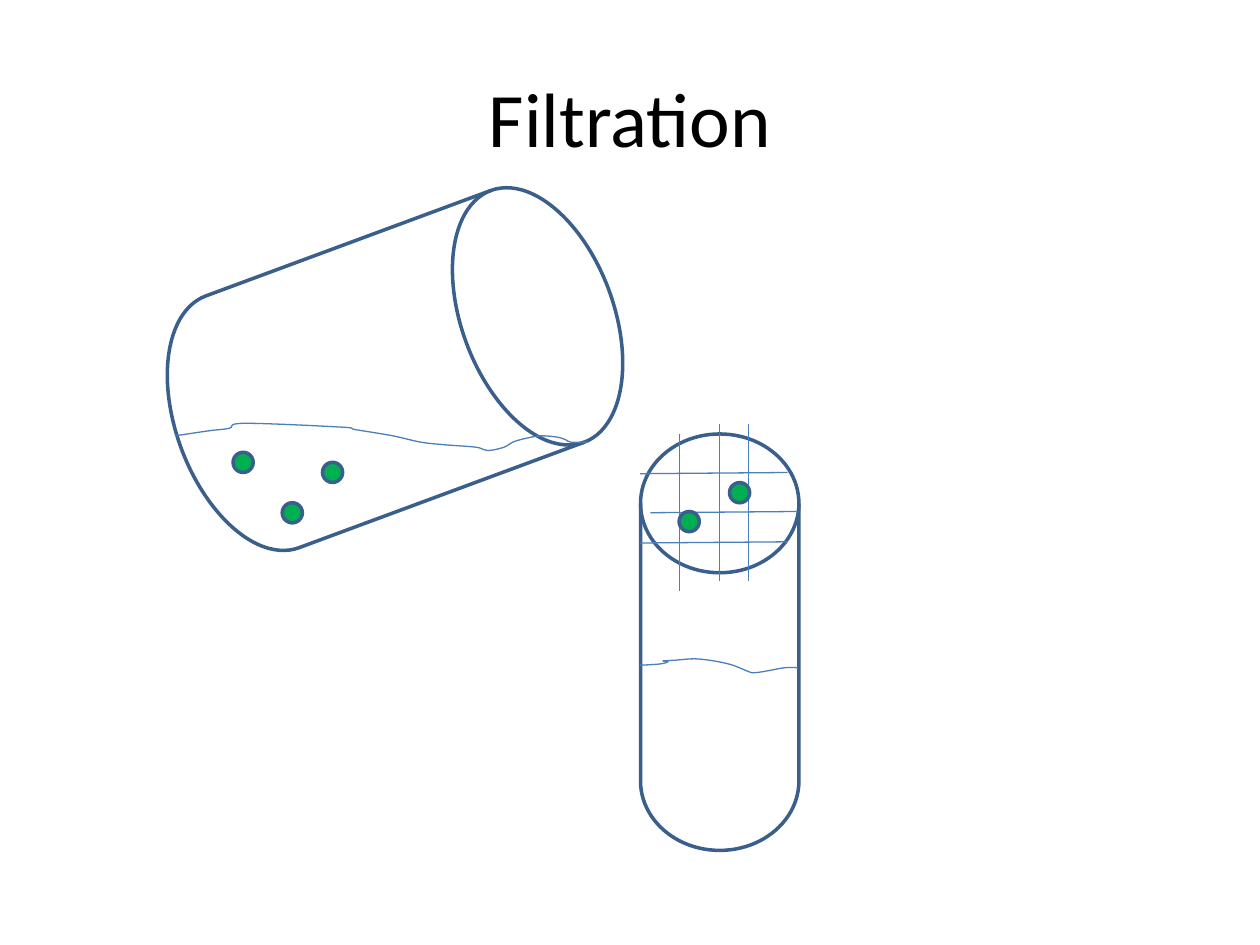
from lxml.etree import SubElement
from pptx import Presentation
from pptx.dml.color import RGBColor
from pptx.enum.shapes import MSO_CONNECTOR, MSO_SHAPE
from pptx.enum.text import MSO_ANCHOR, PP_ALIGN
from pptx.oxml.ns import qn
from pptx.util import Pt

WHITE = RGBColor(0xFF, 0xFF, 0xFF)
BLACK = RGBColor(0, 0, 0)
OUTLINE = RGBColor(0x3A, 0x5F, 0x8C)
THIN_BLUE = RGBColor(0x4B, 0x7E, 0xBC)
GREEN = RGBColor(0, 0xB0, 0x50)
PARTICLE_SIZE = 11.5

BEAKER_SURFACE = [
    (-49, 168.5), (-29.5, 165.6), (-18, 164.2), (-9.3, 161.3), (46.1, 163.5),
    (54, 164.9), (75.6, 168.5), (91.5, 172.1), (105.2, 173.6), (123.2, 175),
    (129.6, 176.9), (139, 175), (144, 172.1), (151.2, 170), (159.9, 168.5),
    (169.2, 169.2), (174.3, 170.7), (177.2, 172.1), (186.5, 172.1),
]
TUBE_SURFACE = [
    (-0.5, 132.2), (10.8, 131.5), (15.7, 130.3), (12.9, 129.7), (20, 129.3),
    (33, 128.6), (50.2, 131.4), (61.7, 135.8), (64.6, 136.5), (70.3, 135.8),
    (82.6, 133.6), (89.8, 133.6),
]


def add_outlined(page, kind, box, fill):
    shape = page.shapes.add_shape(kind, *(Pt(value) for value in box))
    shape.shadow.inherit = False
    shape.fill.solid()
    shape.fill.fore_color.rgb = fill
    shape.line.color.rgb = OUTLINE
    shape.line.width = Pt(2)
    return shape


def add_thin_line(page, start, end):
    line = page.shapes.add_connector(
        MSO_CONNECTOR.STRAIGHT, *(Pt(value) for value in (*start, *end)))
    line.line.color.rgb = THIN_BLUE
    line.line.width = Pt(0.75)
    SubElement(line._element.spPr, qn("a:effectLst"))


def smooth_controls(points):
    """Return two control points and an end point for each curve segment."""
    padded = [points[0], *points, points[-1]]
    controls = []
    for before, start, end, after in zip(padded, padded[1:], padded[2:], padded[3:]):
        controls.append(tuple(s + (e - b) / 6 for b, s, e in zip(before, start, end)))
        controls.append(tuple(e - (a - s) / 6 for s, e, a in zip(start, end, after)))
        controls.append(end)
    return controls


def add_surface(page, box, offsets):
    """Draw a liquid surface as a smooth open curve through the offsets."""
    left, top = box[:2]
    points = [(Pt(left + x), Pt(top + y)) for x, y in offsets]
    builder = page.shapes.build_freeform(*points[0])
    builder.add_line_segments(smooth_controls(points), close=False)
    surface = builder.convert_to_shape()
    segments = list(surface._element.iter(qn("a:lnTo")))
    outline = segments[0].getparent()
    for index in range(0, len(segments), 3):
        curve = SubElement(outline, qn("a:cubicBezTo"))
        for segment in segments[index:index + 3]:
            curve.append(segment[0])
            outline.remove(segment)
    surface.shadow.inherit = False
    surface.fill.background()
    surface.line.color.rgb = THIN_BLUE
    surface.line.width = Pt(0.75)


def add_particles(page, box, offsets):
    for x, y in offsets:
        add_outlined(page, MSO_SHAPE.OVAL,
                     (box[0] + x, box[1] + y, PARTICLE_SIZE, PARTICLE_SIZE), GREEN)


def add_vessel(page, box, surface, rotation=0):
    vessel = add_outlined(page, MSO_SHAPE.FLOWCHART_MAGNETIC_DISK, box, WHITE)
    vessel.rotation = rotation
    add_surface(page, box, surface)


def add_title(page, box):
    title = page.shapes.add_textbox(*(Pt(value) for value in box))
    frame = title.text_frame
    frame.word_wrap = True
    frame.vertical_anchor = MSO_ANCHOR.MIDDLE
    para = frame.paragraphs[0]
    para.alignment = PP_ALIGN.CENTER
    span = para.add_run()
    span.text = "Filtration"
    span.font.name = "Calibri"
    span.font.size = Pt(44)
    span.font.color.rgb = BLACK


def add_beaker(page, box):
    add_vessel(page, box, BEAKER_SURFACE, rotation=69.7)
    add_particles(page, box, [(-15.8, 177.9), (35.3, 183.6), (12.3, 206.7)])


def add_filter_mesh(page, box):
    left, top = box[:2]
    for x, y in [(22.1, 0), (45.1, -5.8), (61.7, -5.8)]:
        add_thin_line(page, (left + x, top + y), (left + x, top + y + 90))
    for x, y in [(84, 22), (89.8, 44.3), (84, 61.6)]:
        add_thin_line(page, (left + x, top + y), (left + x - 84.2, top + y + 0.7))


def add_filter_tube(page, box):
    add_vessel(page, box, TUBE_SURFACE)
    add_filter_mesh(page, box)
    add_particles(page, box, [(50.9, 27.8), (22.1, 44.3)])


def main():
    deck = Presentation()
    deck.slide_width, deck.slide_height = Pt(720), Pt(540)
    page = deck.slides.add_slide(deck.slide_layouts[6])
    add_title(page, (36, 21.6, 648, 90))
    add_filter_tube(page, (366, 248, 90.5, 238))
    add_beaker(page, (149, 80.6, 153.4, 260.6))
    deck.save("out.pptx")


if __name__ == "__main__":
    main()
